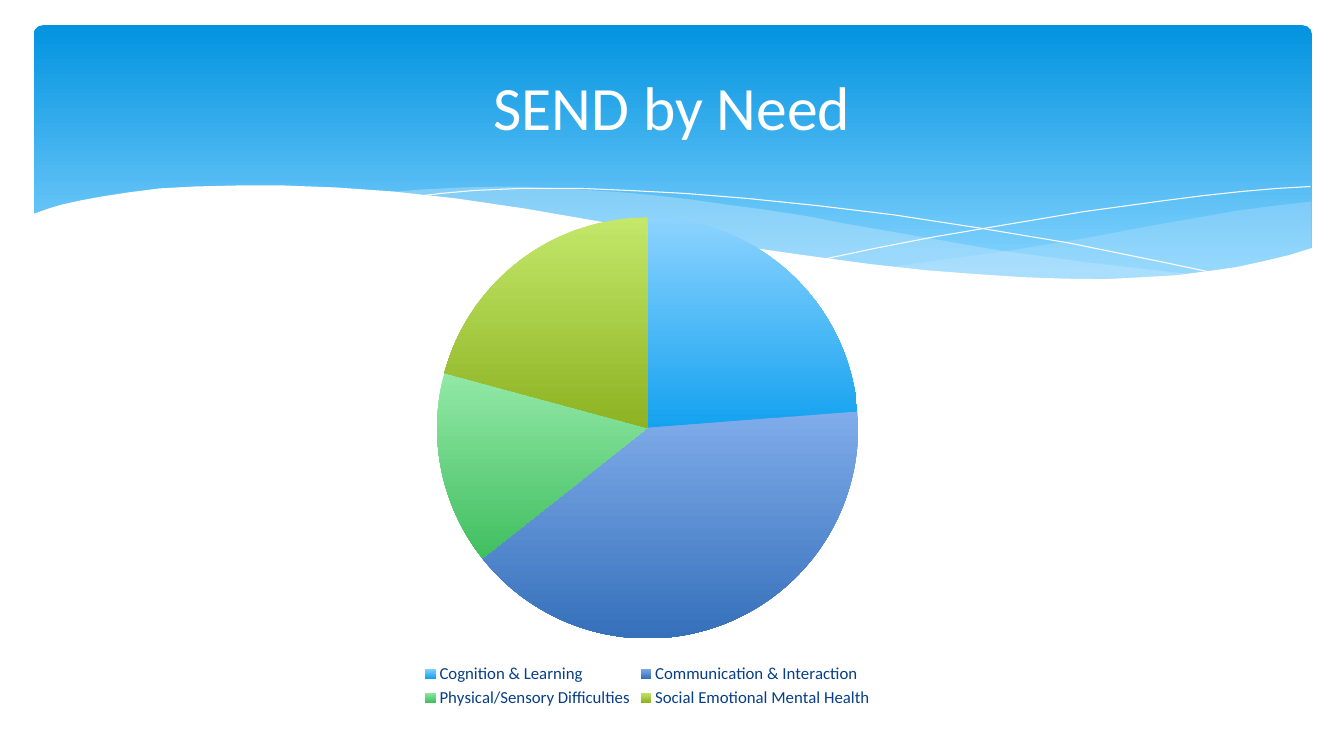
from lxml.etree import SubElement
from pptx import Presentation
from pptx.chart.data import CategoryChartData
from pptx.dml.color import RGBColor
from pptx.enum.chart import XL_CHART_TYPE, XL_LEGEND_POSITION
from pptx.enum.shapes import MSO_SHAPE
from pptx.enum.text import MSO_ANCHOR, PP_ALIGN
from pptx.oxml.ns import qn
from pptx.util import Pt

FONT = "Calibri"
COLORS = {
    "white": "FFFFFF",
    "navy": "073E87",
    "band_top": "0293E0",
    "band_bottom": "83D3FE",
    "wave": "C6E7FC",
}
NEEDS = [
    ("Cognition & Learning", 24, "8CD3FF", "14A2EF"),
    ("Communication & Interaction", 41, "80ACEA", "3570BA"),
    ("Physical/Sensory Difficulties", 15, "92E8A6", "41BF60"),
    ("Social Emotional Mental Health", 21, "C3E86A", "8DB222"),
]
RIGHT_WAVE = [
    (936, 144), (910.8, 146.9), (883.4, 150.5), (855.4, 155.5), (825.8, 160.6),
    (772.6, 170.6), (723.6, 178.6), (677.5, 185), (635, 190.8), (663, 193.7),
    (689.8, 195.8), (714.9, 198), (738, 199.4), (771, 200.2), (801, 199.4),
    (828.7, 198), (853.9, 195.8), (877, 192.2), (898, 188.6), (924.5, 181.4),
    (936.7, 177.8), (936.7, 144),
]
MIDDLE_WAVE = [
    (856.8, 196.6), (830.9, 193.7), (774.7, 187.2), (712.1, 178.6), (641.5, 166.3),
    (604, 159.8), (574.6, 154.1), (546.5, 149.8), (519, 146.2), (494, 142.6),
    (469.4, 139.7), (445.7, 137.5), (403.2, 134.6), (364.3, 133.2), (330.5, 133.9),
    (301, 135.4), (275, 137.5), (310.3, 141.1), (347.8, 146.2), (388, 151.9),
    (431.3, 159.8), (470.9, 167), (508.3, 172.8), (543.6, 178.6), (577.4, 183.6),
    (609, 187.9), (638.6, 191.5), (666.7, 194.4), (693.4, 197.3), (718.6, 198.7),
    (741.6, 199.4), (763.9, 200.2), (805, 200.2), (840, 198),
]
FALLING_LINE = [
    (296.6, 140.4), (315, 138.2), (338.4, 136.1), (371.5, 134.6), (415.4, 134.6),
    (450, 136.1), (489.6, 138.2), (534.2, 141.8), (583.9, 146.9), (637.9, 153.4),
    (698.4, 162.7), (763.2, 173.5), (833.8, 187.9), (871.2, 195.8),
]
RISING_LINE = [
    (589, 185), (626.4, 177.1), (667.4, 169.2), (717.8, 160.6), (774, 151.2),
    (831.6, 143.3), (859.7, 139.7), (887, 136.8), (912.2, 134.6), (936, 133.2),
]
WHITE_WAVE = [
    (937.4, 177.1), (920.9, 182.2), (902.9, 186.5), (883.4, 190.8), (862.6, 193.7),
    (840.2, 196.6), (816.5, 198), (789.8, 199.4), (761.8, 199.1), (730.8, 198),
    (697.7, 195.8), (661, 193), (621.4, 188.6), (578.9, 182.9), (532.8, 176.4),
    (483.1, 167.8), (429.1, 158.4), (375.1, 149), (326.2, 141.8), (280.8, 136.8),
    (239.8, 133.9), (203, 132.5), (169.2, 132.5), (139.7, 133.2), (113.8, 134.6),
    (91.4, 137.5), (72.7, 140.4), (56.9, 143.3), (43.9, 146.2), (34.6, 149),
    (22.3, 153.4), (22.3, 236.9), (938.2, 236.9),
]


def rgb(name):
    return RGBColor.from_string(COLORS.get(name, name))


def fill_gradient(fill, top, bottom, end=1.0):
    fill.gradient()
    fill.gradient_angle = 270
    for stop, color, position in zip(fill.gradient_stops, (top, bottom), (0, end)):
        stop.color.rgb = rgb(color)
        stop.position = position


def add_band(s):
    sp = s.shapes.add_shape(MSO_SHAPE.ROUNDED_RECTANGLE, Pt(24), Pt(18), Pt(913), Pt(194.4))
    sp.adjustments[0] = 0.034
    sp.shadow.inherit = False
    sp.line.fill.background()
    fill_gradient(sp.fill, "band_top", "band_bottom", 0.9)


def add_outline(s, points, close):
    start, *rest = [(Pt(x), Pt(y)) for x, y in points]
    builder = s.shapes.build_freeform(*start)
    builder.add_line_segments(rest, close=close)
    sp = builder.convert_to_shape()
    sp.shadow.inherit = False
    return sp


def add_wave(s, points, color, opacity=100):
    sp = add_outline(s, points, True)
    sp.line.fill.background()
    sp.fill.solid()
    sp.fill.fore_color.rgb = rgb(color)
    if opacity < 100:
        clr = sp.element.spPr.find(qn("a:solidFill"))[0]
        SubElement(clr, qn("a:alpha")).set("val", str(opacity * 1000))


def add_curve(s, points):
    sp = add_outline(s, points, False)
    sp.fill.background()
    sp.line.color.rgb = rgb("white")
    sp.line.width = Pt(0)


def format_title(s, text):
    sp = s.shapes.title
    sp.element.getparent().append(sp.element)
    sp.left, sp.top, sp.width, sp.height = Pt(48), Pt(26.6), Pt(864), Pt(98.6)
    tf = sp.text_frame
    tf.text = text
    tf.vertical_anchor = MSO_ANCHOR.MIDDLE
    p = tf.paragraphs[0]
    p.alignment = PP_ALIGN.CENTER
    font = p.runs[0].font
    font.name, font.size = FONT, Pt(44)
    font.color.rgb = rgb("white")


def add_pie(s, needs):
    data = CategoryChartData()
    data.categories = [need[0] for need in needs]
    data.add_series("Series 1", [need[1] for need in needs])
    chart = s.shapes.add_chart(
        XL_CHART_TYPE.PIE, Pt(179.3), Pt(145.4), Pt(566.6), Pt(362.9), data
    ).chart
    chart.has_title = False
    chart.font.name, chart.font.size = FONT, Pt(10)
    chart.has_legend = True
    legend = chart.legend
    legend.position = XL_LEGEND_POSITION.BOTTOM
    legend.include_in_layout = False
    legend.font.name, legend.font.size = FONT, Pt(12)
    legend.font.color.rgb = rgb("navy")
    plot = chart.plots[0]
    plot.vary_by_categories = True
    for i, (_, _, top, bottom) in enumerate(needs):
        point = plot.series[0].points[i]
        fill_gradient(point.format.fill, top, bottom)
        point.format.line.fill.background()


def main():
    prs = Presentation()
    prs.slide_width, prs.slide_height = Pt(960), Pt(540)
    s = prs.slides.add_slide(prs.slide_layouts[5])
    add_band(s)
    add_wave(s, RIGHT_WAVE, "wave", 29)
    add_wave(s, MIDDLE_WAVE, "wave", 40)
    add_curve(s, FALLING_LINE)
    add_curve(s, RISING_LINE)
    add_wave(s, WHITE_WAVE, "white")
    format_title(s, "SEND by Need")
    add_pie(s, NEEDS)
    prs.save("out.pptx")


if __name__ == "__main__":
    main()
